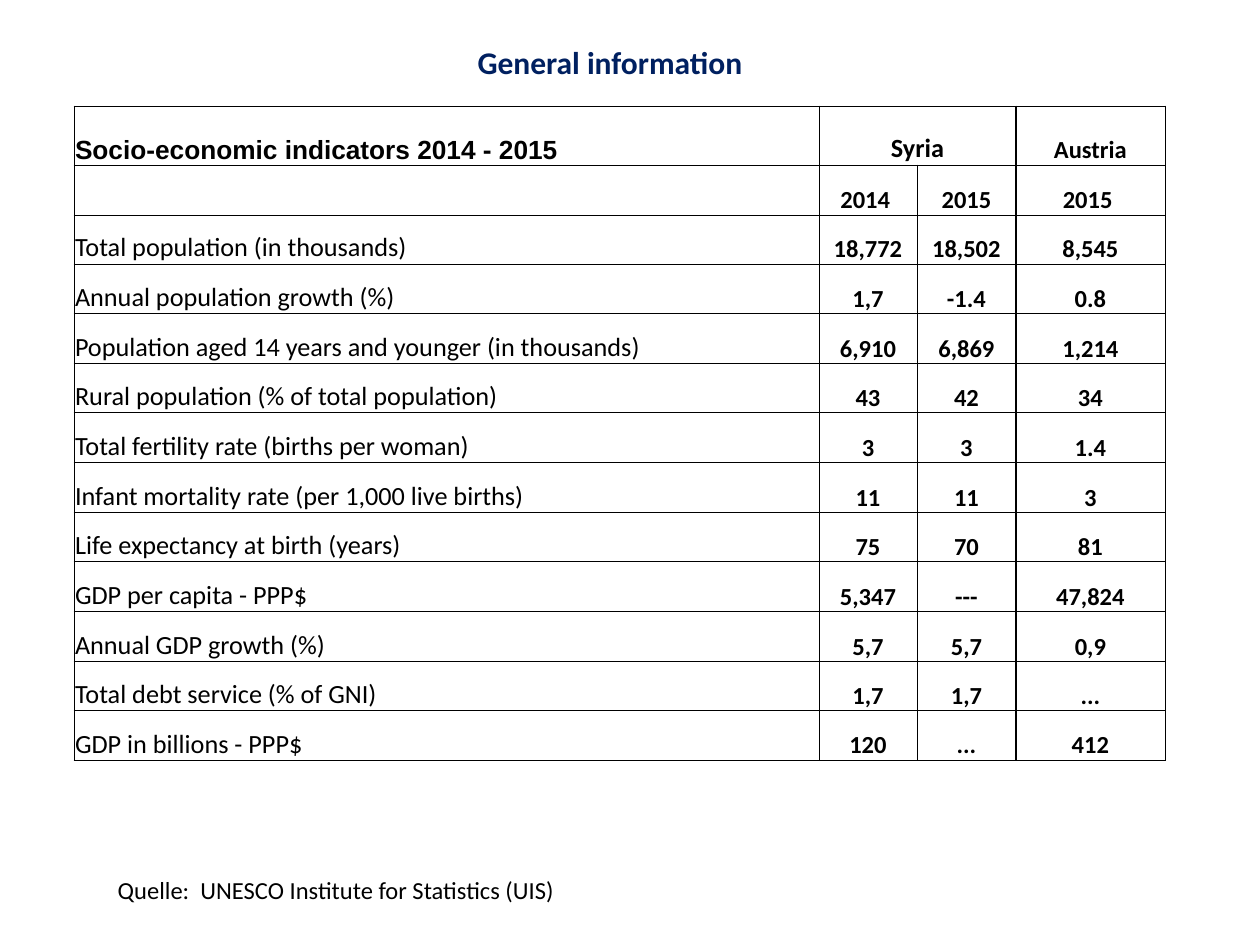
"""Build the slide of general socio-economic indicators for Syria and Austria."""
from lxml.etree import SubElement
from pptx import Presentation
from pptx.dml.color import RGBColor
from pptx.enum.text import MSO_ANCHOR, MSO_AUTO_SIZE, PP_ALIGN
from pptx.oxml.ns import qn
from pptx.util import Emu, Pt

NAVY = RGBColor(0x00, 0x20, 0x60)
BLACK = RGBColor(0x00, 0x00, 0x00)

COLUMNS = [745, 98, 99, 149]
HEADER_HEIGHT, ROW_HEIGHTS = 59, [50, 49, 50]
AUSTRIA = 3
ROWS = [
    ("Socio-economic indicators 2014 - 2015", "Syria", "", "Austria"),
    ("", "2014 ", "2015", "2015 "),
    ("Total population (in thousands)", "18,772", "18,502", "8,545"),
    ("Annual population growth (%)", "1,7", "-1.4", "0.8"),
    ("Population aged 14 years and younger (in thousands)", "6,910", "6,869", "1,214"),
    ("Rural population (% of total population)", "43", "42", "34"),
    ("Total fertility rate (births per woman)", "3", "3", "1.4"),
    ("Infant mortality rate (per 1,000 live births)", "11", "11", "3"),
    ("Life expectancy at birth (years)", "75", "70", "81"),
    ("GDP per capita - PPP$", "5,347", "---", "47,824"),
    ("Annual GDP growth (%)", "5,7", "5,7", "0,9"),
    ("Total debt service (% of GNI)", "1,7", "1,7", "..."),
    ("GDP in billions - PPP$", "120", "...", "412"),
]


def px(n):
    return Emu(round(n * 914400 / 126))


def place(shape, left, top, width, height):
    shape.left, shape.top = px(left), px(top)
    shape.width, shape.height = px(width), px(height)


def write(tf, text, size, color=BLACK, bold=False, align=PP_ALIGN.CENTER, font="Calibri"):
    tf.text = text
    p = tf.paragraphs[0]
    p.alignment = align
    for style in [p.font] + [r.font for r in p.runs]:
        style.name, style.size, style.bold = font, Pt(size), bold
        style.color.rgb = color
    return p


def add_title(s, text):
    title = s.shapes.title
    place(title, 392, 37, 436, 50)
    tf = title.text_frame
    tf.vertical_anchor = MSO_ANCHOR.TOP
    tf.auto_size = MSO_AUTO_SIZE.NONE
    write(tf, text, 18, NAVY, bold=True)


def add_source(s, text):
    tf = s.shapes.add_textbox(px(103), px(869), px(466), px(43)).text_frame
    tf.word_wrap = False
    tf.auto_size = MSO_AUTO_SIZE.SHAPE_TO_FIT_TEXT
    write(tf, text, 14)


def set_borders(cell, **widths):
    tc_pr = cell._tc.get_or_add_tcPr()
    for side in "LRTB":
        ln = SubElement(tc_pr, qn(f"a:ln{side}"), w=str(Pt(widths.get(side, 0.5))))
        fill = SubElement(ln, qn("a:solidFill"))
        SubElement(fill, qn("a:srgbClr"), val=str(BLACK))


def format_cell(cell, text, row, col):
    cell.vertical_anchor = MSO_ANCHOR.BOTTOM
    data = row > 1 and col > 1
    margin = px(0 if data else 1)
    cell.margin_left = cell.margin_right = cell.margin_top = margin
    cell.margin_bottom = 0
    size = 15 if col == 0 or text == "Syria" else 14
    p = write(cell.text_frame, text, size, bold=row == 0 or col > 0,
              align=PP_ALIGN.CENTER if col else PP_ALIGN.LEFT,
              font="Calibri" if row or col else "Arial")
    if data:
        p.line_spacing, p.space_after = 1.15, Pt(10)
    last_syria = col + 1 == AUSTRIA or cell.is_merge_origin
    set_borders(cell, L=1 if col == AUSTRIA else 0.5, R=1 if last_syria else 0.5)
    cell.fill.background()


def add_indicators(s):
    heights = [HEADER_HEIGHT] + [ROW_HEIGHTS[i % 3] for i in range(len(ROWS) - 1)]
    frame = s.shapes.add_table(len(ROWS), len(COLUMNS), px(74), px(106),
                               px(sum(COLUMNS)), px(sum(heights)))
    table = frame.table
    table.first_row = table.horz_banding = False
    for column, width in zip(table.columns, COLUMNS):
        column.width = px(width)
    for row, height in zip(table.rows, heights):
        row.height = px(height)
    table.cell(0, 1).merge(table.cell(0, 2))
    for i, row in enumerate(ROWS):
        for j, text in enumerate(row):
            format_cell(table.cell(i, j), text, i, j)


def main():
    prs = Presentation()
    prs.slide_width, prs.slide_height = px(1260), px(945)
    s = prs.slides.add_slide(prs.slide_layouts[5])
    add_source(s, "Quelle:  UNESCO Institute for Statistics (UIS)")
    add_indicators(s)
    add_title(s, "General information")
    prs.save("out.pptx")


if __name__ == "__main__":
    main()
